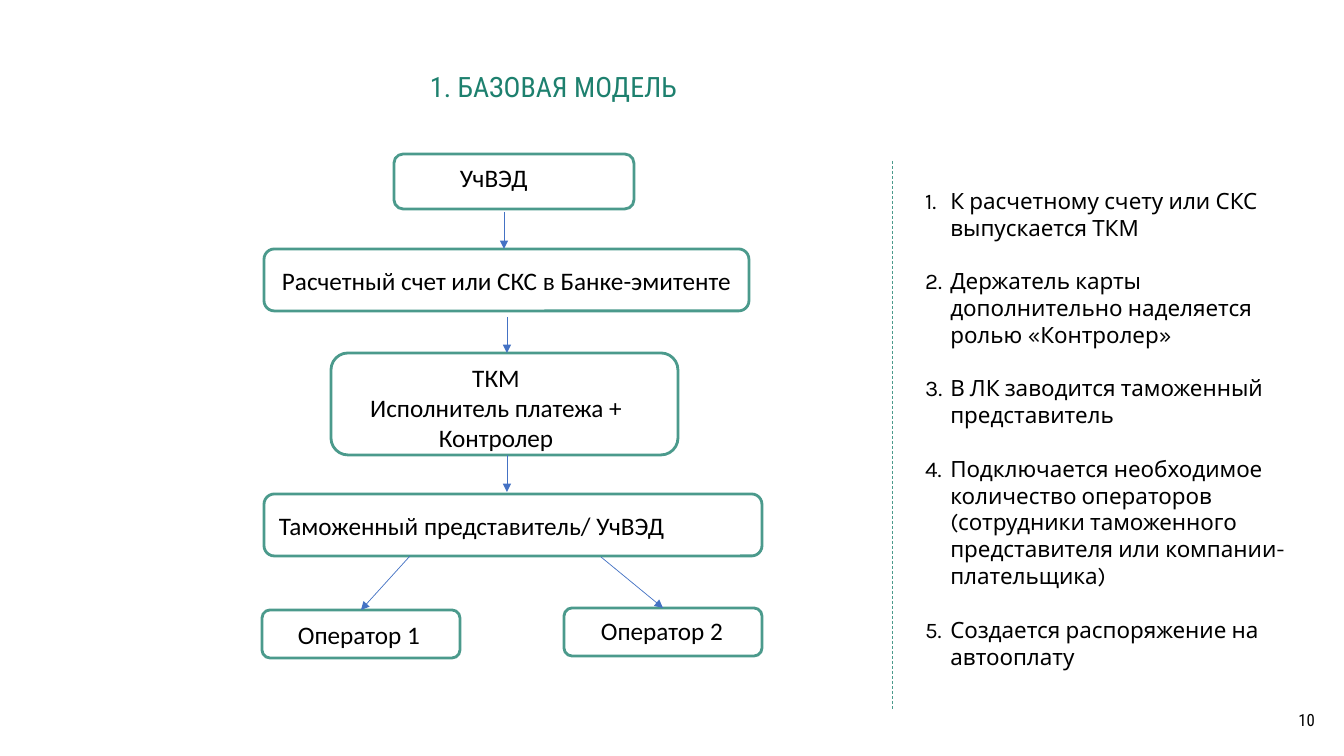
from lxml.etree import SubElement
from pptx import Presentation
from pptx.dml.color import RGBColor
from pptx.enum.dml import MSO_LINE
from pptx.enum.shapes import MSO_CONNECTOR, MSO_SHAPE
from pptx.enum.text import MSO_ANCHOR as ANCHOR, MSO_AUTO_SIZE as AUTO_SIZE, PP_ALIGN as ALIGN
from pptx.oxml.ns import qn
from pptx.util import Emu, Pt

# Content: lengths in px, 100.8 px to the inch
GREEN, BLUE, BLACK, TITLE_GREEN = "4B9A8C", "4472C4", "000000", "1D806E"
HEADING = "1. БАЗОВАЯ МОДЕЛЬ"
PAGE_NUMBER = "10"
# Each step: box, label frame, label lines, alignment
STEPS = {
    "participant": ((394, 154, 240, 55), (450, 157, 208, 40), ["УчВЭД"], ALIGN.LEFT),
    "account": ((264, 249, 485, 62), (231, 260, 551, 40),
                ["Расчетный счет или СКС в Банке-эмитенте"], ALIGN.CENTER),
    "card": ((331, 353, 347, 102), (317, 357, 358, 102),
             ["ТКМ", "Исполнитель платежа + Контролер"], ALIGN.CENTER),
    "agent": ((264, 494, 498, 62), (269, 505, 492, 40),
              ["Таможенный представитель/ УчВЭД"], ALIGN.LEFT),
    "operator 1": ((262, 610, 198, 48), (288, 614, 163, 40), ["Оператор 1"], ALIGN.LEFT),
    "operator 2": ((564, 608, 198, 48), (591, 610, 163, 40), ["Оператор 2"], ALIGN.LEFT),
}
DOWN_ARROWS = [(504, 212, 249), (507, 317, 353), (507, 455, 492)]  # x, top, bottom
OPERATOR_ARROWS = [(410, 556, "operator 1"), (601, 557, "operator 2")]  # start x, y, target
RULES = [
    "К расчетному счету или СКС выпускается ТКМ",
    "Держатель карты дополнительно наделяется ролью «Контролер»",
    "В ЛК заводится таможенный представитель",
    "Подключается необходимое количество операторов (сотрудники таможенного "
    "представителя или компании-плательщика)",
    "Создается распоряжение на автооплату",
]


def px(length):
    return Emu(round(length * 914400 / 100.8))


def color(hex_code):
    return RGBColor.from_string(hex_code)


def place(shape, frame):
    shape.left, shape.top, shape.width, shape.height = map(px, frame)


def add_run(paragraph, text, size, font_name, hex_code):
    run = paragraph.add_run()
    run.text = text
    run.font.size = Pt(size)
    run.font.name = font_name
    run.font.color.rgb = color(hex_code)


def next_paragraph(frame, index):
    return frame.add_paragraph() if index else frame.paragraphs[0]


def add_line(x1, y1, x2, y2, hex_code):
    line = slide.shapes.add_connector(MSO_CONNECTOR.STRAIGHT, *map(px, (x1, y1, x2, y2)))
    line.line.color.rgb = color(hex_code)
    line.line.width = Pt(0.5)
    SubElement(line._element.spPr, qn("a:effectLst"))
    return line


def add_arrow(x1, y1, x2, y2):
    arrow = add_line(x1, y1, x2, y2, BLUE)
    SubElement(arrow.line._get_or_add_ln(), qn("a:tailEnd"), type="triangle")
    return arrow


def add_label(frame, lines, align):
    label = slide.shapes.add_textbox(*map(px, frame)).text_frame
    label.word_wrap = True
    for index, text in enumerate(lines):
        paragraph = next_paragraph(label, index)
        paragraph.alignment = align
        add_run(paragraph, text, 18, "Calibri", BLACK)


deck = Presentation()
deck.slide_width, deck.slide_height = px(1344), px(756)
slide = deck.slides.add_slide(deck.slide_layouts[1])
title, rules = slide.placeholders

# Title
place(title, (430, 48, 861, 80))
heading = title.text_frame
heading.margin_left = heading.margin_right = heading.margin_top = heading.margin_bottom = 0
heading.vertical_anchor = ANCHOR.MIDDLE
heading.auto_size = AUTO_SIZE.NONE
heading.paragraphs[0].alignment = ALIGN.LEFT
heading.paragraphs[0].line_spacing = 0.9
add_run(heading.paragraphs[0], HEADING, 20, "Roboto Condensed", TITLE_GREEN)

# Numbered rules
place(rules, (915, 182, 405, 472))
rules.text_frame.vertical_anchor = ANCHOR.TOP
rules.text_frame.auto_size = AUTO_SIZE.NONE
for index, rule in enumerate(RULES):
    paragraph = next_paragraph(rules.text_frame, index)
    paragraph.space_before = Pt(19 if index else 0)
    properties = paragraph._p.get_or_add_pPr()
    properties.set("marL", "228600")
    properties.set("indent", "-228600")
    SubElement(properties, qn("a:buFont"), typeface="Karla")
    SubElement(properties, qn("a:buAutoNum"), type="arabicPeriod")
    add_run(paragraph, rule, 16, "Karla", BLACK)

# Divider
divider = add_line(892, 161, 892, 709, GREEN)
divider.line.dash_style = MSO_LINE.DASH

# Boxes and their labels
boxes = {}
for step, (box_frame, label_frame, lines, align) in STEPS.items():
    box = slide.shapes.add_shape(MSO_SHAPE.ROUNDED_RECTANGLE, *map(px, box_frame))
    box.shadow.inherit = False
    box.fill.background()
    box.line.color.rgb = color(GREEN)
    box.line.width = Pt(2)
    boxes[step] = box
    add_label(label_frame, lines, align)

# Arrows
for x, top, bottom in DOWN_ARROWS:
    add_arrow(x, top, x, bottom)
for x, y, operator in OPERATOR_ARROWS:
    left, top, width, _ = STEPS[operator][0]
    add_arrow(x, y, left + width // 2, top).end_connect(boxes[operator], 0)

# Page number
footer = slide.shapes.add_textbox(*map(px, (1023, 701, 302, 40))).text_frame
footer.word_wrap = True
footer.vertical_anchor = ANCHOR.MIDDLE
footer.paragraphs[0].alignment = ALIGN.RIGHT
footer.paragraphs[0].line_spacing = 0.9
add_run(footer.paragraphs[0], PAGE_NUMBER, 12, "Roboto Condensed", BLACK)

deck.save("out.pptx")
